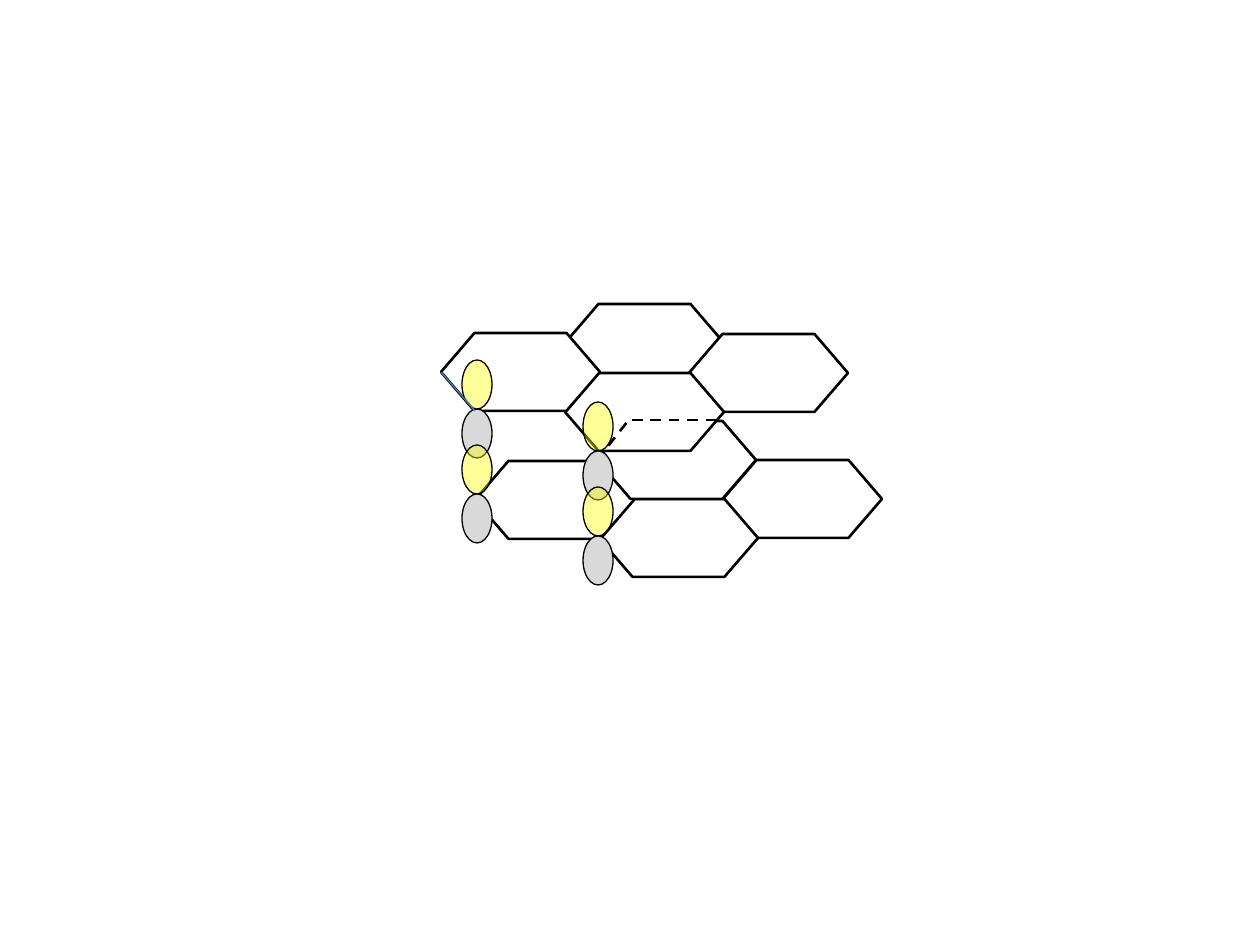
from lxml.etree import SubElement
from pptx import Presentation
from pptx.dml.color import RGBColor
from pptx.enum.dml import MSO_LINE_DASH_STYLE as Dash
from pptx.enum.shapes import MSO_CONNECTOR as Connector, MSO_SHAPE as Shape
from pptx.oxml.ns import qn
from pptx.util import Emu, Pt

COLORS = {"white": "FFFFFF", "black": "000000", "yellow": "FFFF00",
          "grey": "D9D9D9", "blue": "4B7EBC"}

# Honeycomb cells, back to front: left, top (px)
CELL_SIZE = (159, 78)
CELLS = [(723, 460), (599, 499), (475, 461), (597, 421),
         (565, 304), (689, 334), (565, 373), (441, 333)]

# Stacks of ellipses: left, top (px), then what each stack holds
BEAD_SIZE = (30, 49)
LEFT_STACK, RIGHT_STACK = (462, 360), (583, 402)
PAIR_STEP = 85
BEADS = [("yellow", 40), ("grey", 100)]

# Edges: start, end (px), colour, width (pt), dash
EDGES = [
    ((441, 372), (475, 411), "blue", 0.75, None),
    ((597, 460), (628, 421), "black", 1.5, Dash.DASH),
    ((632, 420), (723, 420), "black", 1.5, Dash.DASH),
]


def px(value):
    return Emu(round(value * 914400 / 126))


def style_line(line, color, width, dash=None):
    line.color.rgb = RGBColor.from_string(COLORS[color])
    for name, value in {"width": Pt(width), "dash_style": dash}.items():
        setattr(line, name, value)


def add_outline(slide, kind, position, size, fill, width, opacity=100):
    shape = slide.shapes.add_shape(kind, *map(px, position + size))
    shape.shadow.inherit = False
    shape.fill.solid()
    shape.fill.fore_color.rgb = RGBColor.from_string(COLORS[fill])
    if opacity < 100:
        color = shape.fill._xPr.find(".//" + qn("a:srgbClr"))
        SubElement(color, qn("a:alpha"), val=str(opacity * 1000))
    style_line(shape.line, "black", width)
    return shape


def add_stack(slide, position):
    left, top = position
    for pair in range(2):
        for row, (color, opacity) in enumerate(BEADS):
            y = top + pair * PAIR_STEP + row * BEAD_SIZE[1]
            add_outline(slide, Shape.OVAL, (left, y), BEAD_SIZE, color, 0.75, opacity)


def add_edge(slide, start, end, color, width, dash):
    edge = slide.shapes.add_connector(Connector.STRAIGHT, *map(px, start + end))
    style_line(edge.line, color, width, dash)
    SubElement(edge._element.spPr, qn("a:effectLst"))


def main():
    presentation = Presentation()
    presentation.slide_width, presentation.slide_height = px(1260), px(945)
    slide = presentation.slides.add_slide(presentation.slide_layouts[6])

    # Honeycomb layers
    for position in CELLS:
        cell = add_outline(slide, Shape.HEXAGON, position, CELL_SIZE, "white", 1.5)
        cell.adjustments[0] = 0.43

    # Stacks, with the edges between them in depth
    add_stack(slide, LEFT_STACK)
    for edge in EDGES:
        add_edge(slide, *edge)
    add_stack(slide, RIGHT_STACK)

    presentation.save("out.pptx")


if __name__ == "__main__":
    main()
